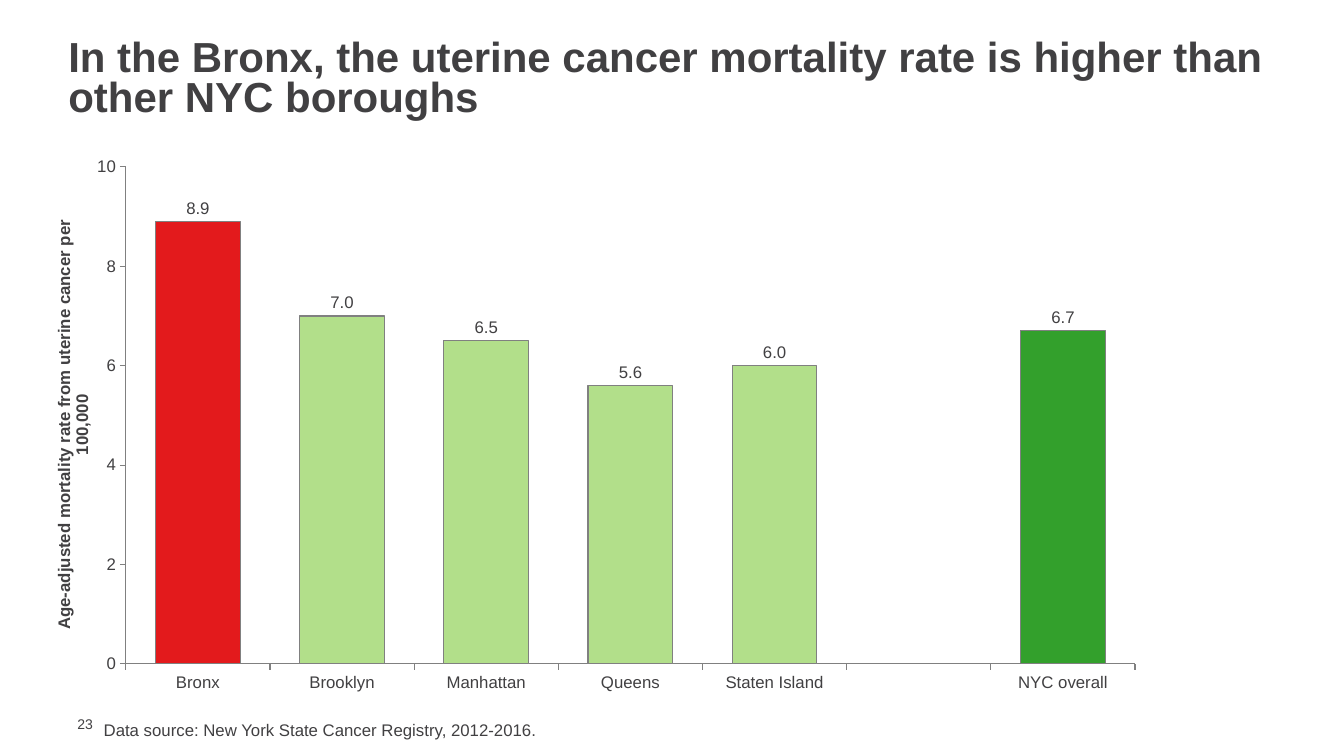
from dataclasses import dataclass

from lxml import etree
from pptx import Presentation
from pptx import util as u
from pptx.chart.data import CategoryChartData
from pptx.dml.color import RGBColor
from pptx.enum import chart as ch, text
from pptx.oxml.ns import qn


@dataclass(frozen=True)
class Theme:
    font: str = "Arial"
    ink: RGBColor = RGBColor(0x41, 0x40, 0x42)
    rule: RGBColor = RGBColor(0x80, 0x80, 0x80)
    borough: RGBColor = RGBColor(0xB2, 0xDF, 0x8A)
    highest: RGBColor = RGBColor(0xE3, 0x1A, 0x1C)
    overall: RGBColor = RGBColor(0x33, 0xA0, 0x2C)
    title_size: int = 30
    body_size: int = 12
    small_size: int = 10
    rule_width: float = 0.75


@dataclass(frozen=True)
class Caption:
    words: str
    left: float
    top: float
    width: float
    height: float
    size: int
    bold: bool = False
    line_spacing: float = 1.0
    anchor: text.MSO_ANCHOR = text.MSO_ANCHOR.TOP
    margin_right: float = 0.1
    margin_y: float = 0.05


@dataclass(frozen=True)
class Rate:
    area: str
    deaths: float | None
    color: RGBColor


THEME = Theme()

CAPTIONS = [
    Caption("23", 0.67, 7.1, 0.43, 0.17, THEME.small_size,
            anchor=text.MSO_ANCHOR.MIDDLE, margin_right=0, margin_y=0),
    Caption("In the Bronx, the uterine cancer mortality rate is higher than other NYC boroughs",
            0.58, 0.34, 12.17, 0.91, THEME.title_size, bold=True, line_spacing=0.8,
            anchor=text.MSO_ANCHOR.MIDDLE),
    Caption("Data source: New York State Cancer Registry, 2012-2016.",
            0.93, 7.09, 9.92, 0.3, THEME.body_size),
]

RATES = [
    Rate("Bronx", 8.9, THEME.highest),
    Rate("Brooklyn", 7.0, THEME.borough),
    Rate("Manhattan", 6.5, THEME.borough),
    Rate("Queens", 5.6, THEME.borough),
    Rate("Staten Island", 6.0, THEME.borough),
    Rate("", None, THEME.borough),
    Rate("NYC overall", 6.7, THEME.overall),
]


def style_font(font, size: int, bold: bool = False) -> None:
    font.name = THEME.font
    font.size = u.Pt(size)
    font.bold = bold
    font.color.rgb = THEME.ink


def style_rule(line) -> None:
    line.color.rgb = THEME.rule
    line.width = u.Pt(THEME.rule_width)


def add_caption(slide, caption: Caption) -> None:
    box = slide.shapes.add_textbox(u.Inches(caption.left), u.Inches(caption.top),
                                   u.Inches(caption.width), u.Inches(caption.height))
    frame = box.text_frame
    frame.word_wrap = True
    frame.auto_size = text.MSO_AUTO_SIZE.SHAPE_TO_FIT_TEXT
    frame.vertical_anchor = caption.anchor
    frame.margin_right = u.Inches(caption.margin_right)
    frame.margin_top = frame.margin_bottom = u.Inches(caption.margin_y)
    frame.text = caption.words
    paragraph = frame.paragraphs[0]
    paragraph.line_spacing = caption.line_spacing
    style_font(paragraph.runs[0].font, caption.size, caption.bold)


def style_axis(axis) -> None:
    axis.has_major_gridlines = False
    axis.major_tick_mark = ch.XL_TICK_MARK.OUTSIDE
    axis.minor_tick_mark = ch.XL_TICK_MARK.NONE
    style_font(axis.tick_labels.font, THEME.body_size)
    style_rule(axis.format.line)


def place_plot(chart, x: float, y: float, w: float, h: float) -> None:
    """Fix the inner plot area as fractions of the chart frame."""
    plot_area = chart.plots[0]._element.getparent()
    for old in plot_area.findall(qn("c:layout")):
        plot_area.remove(old)
    layout = etree.Element(qn("c:layout"))
    manual = etree.SubElement(layout, qn("c:manualLayout"))
    settings = {"layoutTarget": "inner", "xMode": "edge", "yMode": "edge",
                "x": x, "y": y, "w": w, "h": h}
    for tag, value in settings.items():
        etree.SubElement(manual, qn(f"c:{tag}")).set("val", str(value))
    plot_area.insert(0, layout)


def add_mortality_chart(slide) -> None:
    rates = CategoryChartData(number_format="0.0")
    rates.categories = [rate.area for rate in RATES]
    rates.add_series("Series 1", [rate.deaths for rate in RATES])
    chart = slide.shapes.add_chart(
        ch.XL_CHART_TYPE.COLUMN_CLUSTERED, u.Inches(0.5), u.Inches(1.33),
        u.Inches(11), u.Inches(5.63), rates).chart
    chart.has_title = False
    chart.has_legend = False
    style_font(chart.font, THEME.small_size)
    place_plot(chart, 0.068, 0.058, 0.91, 0.876)

    style_axis(chart.category_axis)
    rate_axis = chart.value_axis
    style_axis(rate_axis)
    rate_axis.minimum_scale, rate_axis.maximum_scale, rate_axis.major_unit = 0, 10, 2
    rate_axis.tick_labels.number_format = "0"
    rate_axis.tick_labels.number_format_is_linked = False
    axis_title = rate_axis.axis_title.text_frame
    axis_title.text = "Age-adjusted mortality rate from uterine cancer per 100,000"
    style_font(axis_title.paragraphs[0].runs[0].font, THEME.body_size, bold=True)

    bars = chart.plots[0]
    bars.gap_width = 70
    bars.vary_by_categories = False
    bars.has_data_labels = True
    labels = bars.data_labels
    labels.show_value = True
    labels.number_format = "0.0"
    labels.number_format_is_linked = False
    labels.position = ch.XL_LABEL_POSITION.OUTSIDE_END
    style_font(labels.font, THEME.body_size)

    series = bars.series[0]
    series.invert_if_negative = False
    series.format.fill.solid()
    series.format.fill.fore_color.rgb = THEME.borough
    style_rule(series.format.line)
    for index, rate in enumerate(RATES):
        if rate.color != THEME.borough:
            bar = series.points[index].format
            bar.fill.solid()
            bar.fill.fore_color.rgb = rate.color
            style_rule(bar.line)


def main() -> None:
    deck = Presentation()
    deck.slide_width, deck.slide_height = u.Inches(13.33), u.Inches(7.5)
    slide = deck.slides.add_slide(deck.slide_layouts[6])
    add_mortality_chart(slide)
    for caption in CAPTIONS:
        add_caption(slide, caption)
    deck.save("out.pptx")


if __name__ == "__main__":
    main()
